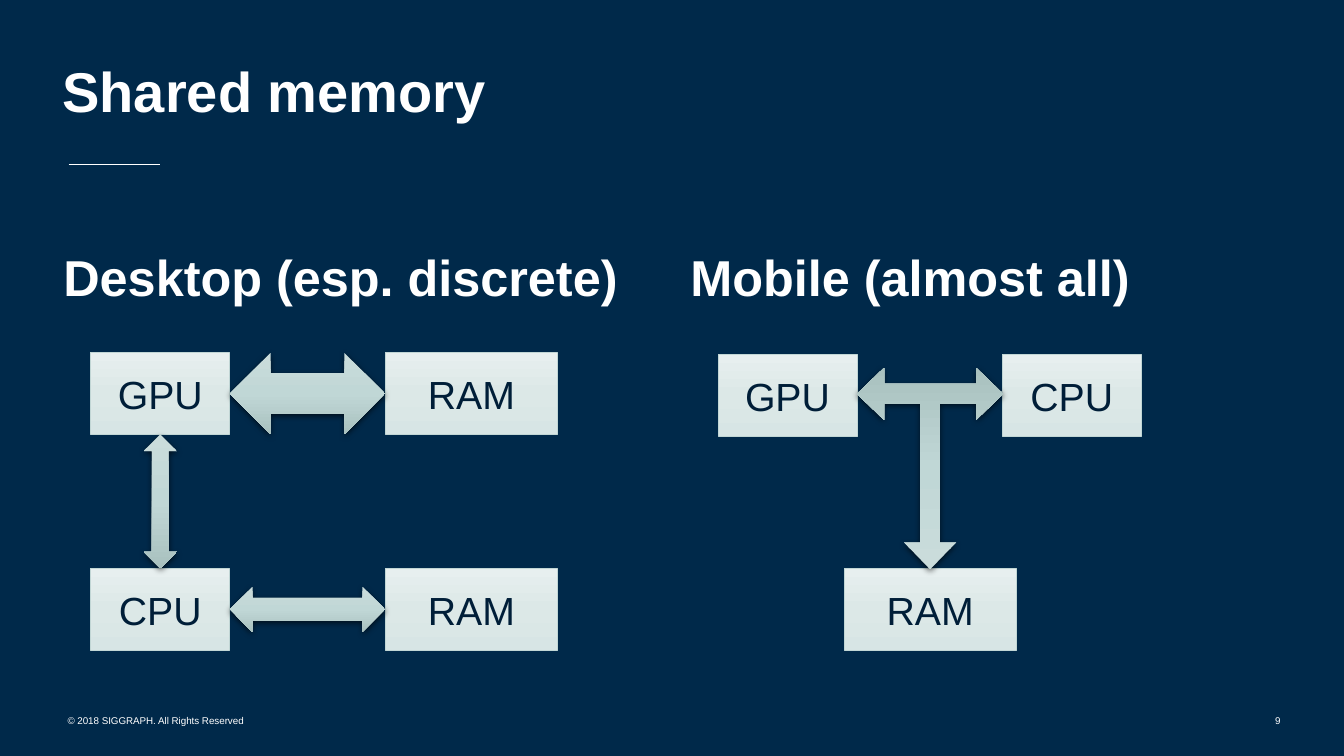
import pptx
import pptx.util
import pptx.dml.color
import pptx.enum.shapes
import pptx.enum.text
import pptx.oxml
import pptx.oxml.ns
from lxml import etree

Inches, Pt = pptx.util.Inches, pptx.util.Pt
qn = pptx.oxml.ns.qn
SHAPE = pptx.enum.shapes.MSO_SHAPE
ALIGN = pptx.enum.text.PP_ALIGN
ANCHOR = pptx.enum.text.MSO_ANCHOR

# Content
TITLE = "Shared memory"
HEADINGS = [("Desktop (esp. discrete)", 0.53), ("Mobile (almost all)", 6.75)]
COPYRIGHT = "© 2018 SIGGRAPH. All Rights Reserved"
PAGE = "9"

# Grid: column lefts, row tops and block widths, in inches
COLUMNS = {"desktop left": 0.9, "desktop right": 3.82,
           "mobile left": 7.12, "mobile right": 9.94, "mobile middle": 8.37}
ROWS = {"top": 3.5, "mobile top": 3.52, "bottom": 5.64}
WIDTHS = {"GPU": 1.38, "CPU": 1.38, "RAM": 1.71}
BLOCK_HEIGHT = 0.81
BLOCKS = [
    ("GPU", "desktop left", "top"),
    ("RAM", "desktop right", "top"),
    ("CPU", "desktop left", "bottom"),
    ("RAM", "desktop right", "bottom"),
    ("GPU", "mobile left", "mobile top"),
    ("CPU", "mobile right", "mobile top"),
    ("RAM", "mobile middle", "bottom"),
]

# Format values
NAVY, INK, WHITE, EDGE = "00294A", "001E38", "FFFFFF", "C1D6D5"
BLOCK_STOPS = [(0, "E7EFEF"), (50, "DCE8E7"), (100, "D7E5E5")]
ARROW_STOPS = [(0, "CADCDB"), (50, "C0D7D6"), (100, "A9C1BF")]

presentation = pptx.Presentation()
presentation.slide_width, presentation.slide_height = Inches(13.33), Inches(7.5)
slide = presentation.slides.add_slide(presentation.slide_layouts[5])


def colour(hex_value):
    return pptx.dml.color.RGBColor.from_string(hex_value)


def place(item, left, top, width, height):
    box = {"left": left, "top": top, "width": width, "height": height}
    for side, inches in box.items():
        setattr(item, side, Inches(inches))


def write(item, words, size, ink=WHITE, bold=False, align=ALIGN.LEFT,
          anchor=ANCHOR.MIDDLE, spacing=1.0, inset=0.1):
    frame = item.text_frame
    frame.text = words
    frame_format = {"word_wrap": True, "vertical_anchor": anchor,
                    "auto_size": pptx.enum.text.MSO_AUTO_SIZE.NONE,
                    "margin_left": Inches(inset), "margin_right": Inches(0.1),
                    "margin_top": Inches(0.05), "margin_bottom": Inches(0.05)}
    for key, value in frame_format.items():
        setattr(frame, key, value)
    paragraph = frame.paragraphs[0]
    paragraph.alignment, paragraph.line_spacing = align, spacing
    font = paragraph.runs[0].font
    for key, value in {"name": "Arial", "size": Pt(size), "bold": bold}.items():
        setattr(font, key, value)
    font.color.rgb = colour(ink)


def add_text(words, box, size, **options):
    write(slide.shapes.add_textbox(*map(Inches, box)), words, size, **options)


def add_graded(kind, box, stops):
    shape = slide.shapes.add_shape(kind, *map(Inches, box))
    shape.shadow.inherit = False
    shape.fill.gradient()
    shape.fill.gradient_angle = 270
    stop_list = shape._element.spPr.find(".//" + qn("a:gsLst"))
    for stop in list(stop_list):
        stop_list.remove(stop)
    for share, hex_value in stops:
        stop = etree.SubElement(stop_list, qn("a:gs"), pos=str(share * 1000))
        etree.SubElement(stop, qn("a:srgbClr"), val=hex_value)
    return shape


def add_block(words, column, row):
    box = (COLUMNS[column], ROWS[row], WIDTHS[words], BLOCK_HEIGHT)
    block = add_graded(SHAPE.RECTANGLE, box, BLOCK_STOPS)
    block.line.color.rgb = colour(EDGE)
    block.line.width = Pt(0.5)
    write(block, words, 28, ink=INK, align=ALIGN.CENTER)


def add_arrow(kind, box):
    arrow = add_graded(kind, box, ARROW_STOPS)
    arrow.line.fill.background()
    effects = arrow._element.spPr.find(qn("a:effectLst"))
    shadow = etree.SubElement(effects, qn("a:outerShdw"), blurRad=str(Pt(4.5)),
                              dist=str(Pt(1.5)), dir="5400000", rotWithShape="0")
    tint = etree.SubElement(shadow, qn("a:srgbClr"), val="000000")
    etree.SubElement(tint, qn("a:alpha"), val="63000")
    return arrow


# Background, title and rule
slide.background.fill.solid()
slide.background.fill.fore_color.rgb = colour(NAVY)
place(slide.shapes.title, 0.52, 0.51, 6.44, 0.86)
write(slide.shapes.title, TITLE, 40, bold=True, spacing=0.9)
rule = slide.shapes.add_connector(pptx.enum.shapes.MSO_CONNECTOR.STRAIGHT,
                                  *map(Inches, (0.68, 1.63, 1.59, 1.63)))
rule.line.color.rgb = colour(WHITE)
rule.line.width = Pt(1)
etree.SubElement(rule._element.spPr, qn("a:effectLst"))

# Headings and footer
for heading, left in HEADINGS:
    add_text(heading, (left, 2.19, 6.03, 0.9), 36, bold=True, anchor=ANCHOR.BOTTOM)
add_text(COPYRIGHT, (0.53, 6.96, 4.5, 0.37), 7, inset=0.14)
add_text(PAGE, (9.8, 6.95, 3, 0.4), 7, align=ALIGN.RIGHT)

# Memory and processor blocks
for block_content in BLOCKS:
    add_block(*block_content)

# Desktop arrows fill the gaps between the blocks
gap_left = COLUMNS["desktop left"] + WIDTHS["GPU"]
gap_width = COLUMNS["desktop right"] - gap_left
for row, thickness in (("top", BLOCK_HEIGHT), ("bottom", 0.45)):
    arrow_top = ROWS[row] + (BLOCK_HEIGHT - thickness) / 2
    add_arrow(SHAPE.LEFT_RIGHT_ARROW, (gap_left, arrow_top, gap_width, thickness))
gap_top = ROWS["top"] + BLOCK_HEIGHT
bus_width = 0.33
bus_left = COLUMNS["desktop left"] + (WIDTHS["GPU"] - bus_width) / 2
add_arrow(SHAPE.UP_DOWN_ARROW,
          (bus_left, gap_top, bus_width, ROWS["bottom"] - gap_top))

# Mobile arrow joins both processors to the one memory
shared_left = COLUMNS["mobile left"] + WIDTHS["GPU"]
shared = add_arrow(SHAPE.LEFT_RIGHT_UP_ARROW, (shared_left, 3.65, 1.45, 2))
for index, share in enumerate((0.135, 0.178, 0.185)):
    shared.adjustments[index] = share
shared._element.spPr.find(qn("a:xfrm")).set("flipV", "1")

presentation.save("out.pptx")
